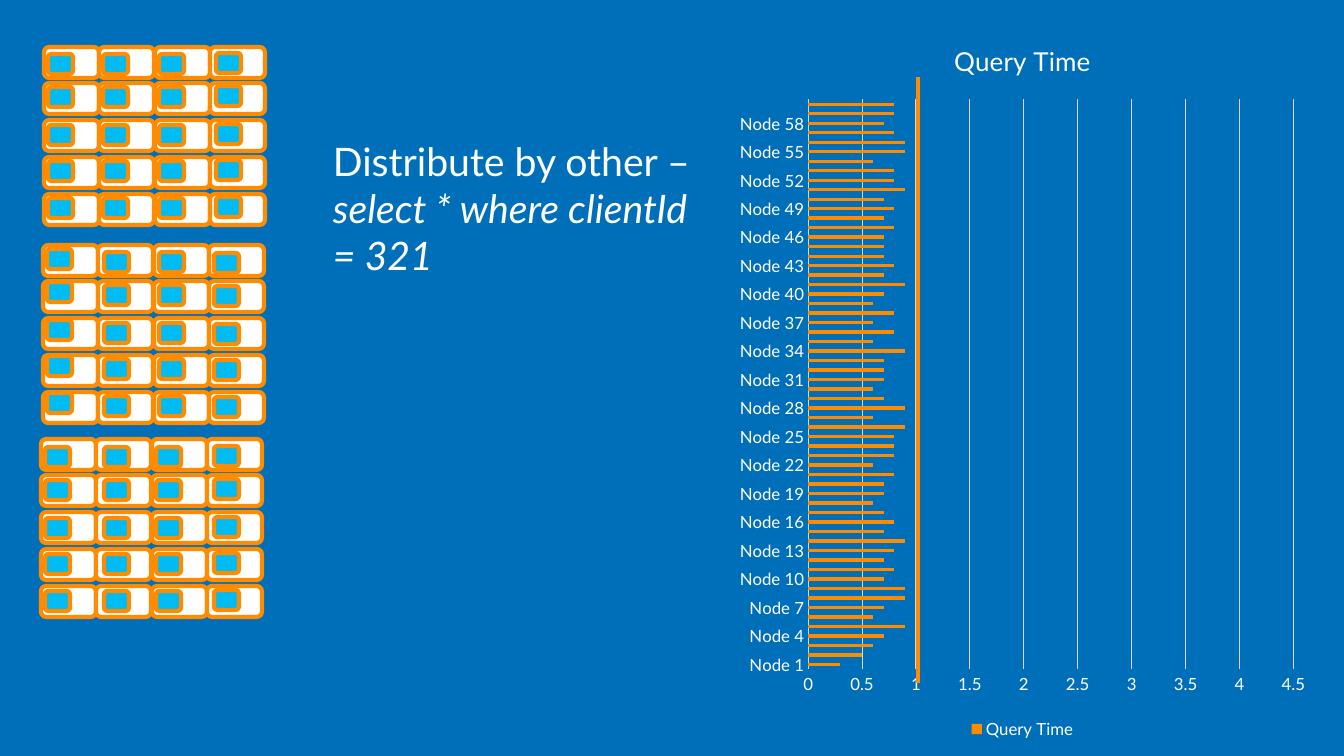
"""Build a slide showing a query spread over racks of nodes, with its time per node."""
from lxml import etree
from pptx import Presentation
from pptx.chart.data import CategoryChartData
from pptx.dml.color import RGBColor
from pptx.enum.chart import XL_CHART_TYPE, XL_LEGEND_POSITION, XL_TICK_MARK
from pptx.enum.shapes import MSO_CONNECTOR, MSO_SHAPE
from pptx.enum.text import MSO_AUTO_SIZE
from pptx.oxml.ns import qn
from pptx.util import Pt

SLIDE_WIDTH, SLIDE_HEIGHT = 1344, 756
EMU_PER_PX = 12192000 / SLIDE_WIDTH

BLUE = RGBColor(0x00, 0x6F, 0xBA)
CYAN = RGBColor(0x00, 0xBC, 0xF2)
ORANGE = RGBColor(0xFF, 0x8C, 0x00)
WHITE = RGBColor(0xFF, 0xFF, 0xFF)
GREY = RGBColor(0xD9, 0xD9, 0xD9)
FONT = "Lato"

ROUNDED = MSO_SHAPE.ROUNDED_RECTANGLE
STRAIGHT = MSO_CONNECTOR.STRAIGHT
FIT_SHAPE = MSO_AUTO_SIZE.SHAPE_TO_FIT_TEXT
BARS = XL_CHART_TYPE.BAR_CLUSTERED
BOTTOM = XL_LEGEND_POSITION.BOTTOM
NO_TICK = XL_TICK_MARK.NONE

NODE_SIZE = (55, 31)
SHARD_SIZE = (25, 20)
COLUMNS, ROWS = 4, 5
SHARD_ROW_OFFSETS = (0, 33, 71, 107, 144)
RACKS = [
    {"corner": (44, 47), "shards": [(48, 54), (103, 54), (159, 54), (216, 53)]},
    {"corner": (43, 245), "shards": [(47, 249), (104, 252), (159, 252), (214, 253)]},
    {"corner": (41, 439), "shards": [(45, 447), (104, 447), (156, 447), (214, 446)]},
]
QUERY_TIMES = [
    0.3, 0.5, 0.6, 0.7, 0.9, 0.6, 0.7, 0.9, 0.9, 0.7, 0.8, 0.7,
    0.8, 0.9, 0.7, 0.8, 0.7, 0.6, 0.7, 0.7, 0.8, 0.6, 0.8, 0.8,
    0.8, 0.9, 0.6, 0.9, 0.7, 0.6, 0.7, 0.7, 0.7, 0.9, 0.6, 0.8,
    0.6, 0.8, 0.6, 0.7, 0.9, 0.7, 0.8, 0.7, 0.7, 0.7, 0.8, 0.7,
    0.8, 0.7, 0.9, 0.8, 0.8, 0.6, 0.9, 0.9, 0.8, 0.7, 0.8, 0.8,
]


def px(*lengths):
    """Turn pixel lengths into a list of EMU."""
    return [round(length * EMU_PER_PX) for length in lengths]


def set_format(target, **values):
    """Set each given attribute on the target."""
    for attribute, value in values.items():
        setattr(target, attribute, value)


def set_font(font, size, **extra):
    """Give a font the white slide typeface at a size in points."""
    set_format(font, name=FONT, size=Pt(size), **extra)
    font.color.rgb = WHITE


def set_line(line, color, width):
    """Give a line a solid colour and a width in points."""
    line.color.rgb = color
    line.width = Pt(width)


def add_block(slide, corner, size, color):
    """Draw an orange-edged rounded block."""
    block = slide.shapes.add_shape(ROUNDED, *px(*corner, *size))
    block.shadow.inherit = False
    block.fill.solid()
    block.fill.fore_color.rgb = color
    set_line(block.line, ORANGE, 3)


def add_nodes(slide, corner):
    """Draw one rack as a grid of white nodes."""
    left, top = corner
    for column in range(COLUMNS):
        for row in range(ROWS):
            node_corner = (left + column * 111 // 2, top + row * 147 // 4)
            add_block(slide, node_corner, NODE_SIZE, WHITE)


def add_shards(slide, column_starts):
    """Draw the cyan data shard inside each node of one rack."""
    for left, top in column_starts:
        for offset in SHARD_ROW_OFFSETS:
            add_block(slide, (left, top + offset), SHARD_SIZE, CYAN)


def add_caption(slide):
    """Write the distribution rule and its query."""
    caption = slide.shapes.add_textbox(*px(323, 132, 383, 152)).text_frame
    set_format(caption, word_wrap=True, auto_size=FIT_SHAPE)
    paragraph = caption.paragraphs[0]
    for words, italic in (
        ("Distribute by other – ", False),
        ("select * where clientId = 321", True),
    ):
        run = paragraph.add_run()
        run.text = words
        set_font(run.font, 28, italic=italic)


def style_axes(chart):
    """Format the node axis and the time axis."""
    for axis in (chart.category_axis, chart.value_axis):
        set_format(axis, major_tick_mark=NO_TICK, minor_tick_mark=NO_TICK)
        set_font(axis.tick_labels.font, 12)
    set_line(chart.category_axis.format.line, GREY, 0.75)
    time_axis = chart.value_axis
    set_format(time_axis, minimum_scale=0, maximum_scale=4.5, has_major_gridlines=True)
    time_axis.format.line.fill.background()
    set_line(time_axis.major_gridlines.format.line, GREY, 0.75)


def add_query_chart(slide):
    """Chart the query time of every node."""
    times = CategoryChartData()
    times.categories = [f"Node {number}" for number in range(1, len(QUERY_TIMES) + 1)]
    times.add_series("Query Time", QUERY_TIMES)
    chart = slide.shapes.add_chart(BARS, *px(728, 18, 589, 725), times).chart
    set_font(chart.font, 10)
    set_format(chart, has_title=True, has_legend=True)
    title = chart.chart_title.text_frame
    title.text = "Query Time"
    set_font(title.paragraphs[0].runs[0].font, 18.6, bold=False)
    set_format(chart.legend, position=BOTTOM, include_in_layout=False)
    set_font(chart.legend.font, 12)
    style_axes(chart)
    plot = chart.plots[0]
    set_format(plot, gap_width=182, vary_by_categories=False)
    bars = plot.series[0].format.fill
    bars.solid()
    bars.fore_color.rgb = ORANGE


def add_time_limit(slide):
    """Mark the slowest node's time with a vertical line."""
    limit = slide.shapes.add_connector(STRAIGHT, *px(918, 77, 918, 683))
    set_line(limit.line, ORANGE, 3)
    etree.SubElement(limit._element.spPr, qn("a:effectLst"))


def main():
    """Assemble the slide and save it."""
    deck = Presentation()
    deck.slide_width, deck.slide_height = px(SLIDE_WIDTH, SLIDE_HEIGHT)
    slide = deck.slides.add_slide(deck.slide_layouts[6])
    slide.background.fill.solid()
    slide.background.fill.fore_color.rgb = BLUE
    for rack in RACKS:
        add_nodes(slide, rack["corner"])
    for rack in RACKS:
        add_shards(slide, rack["shards"])
    add_caption(slide)
    add_query_chart(slide)
    add_time_limit(slide)
    deck.save("out.pptx")


if __name__ == "__main__":
    main()
